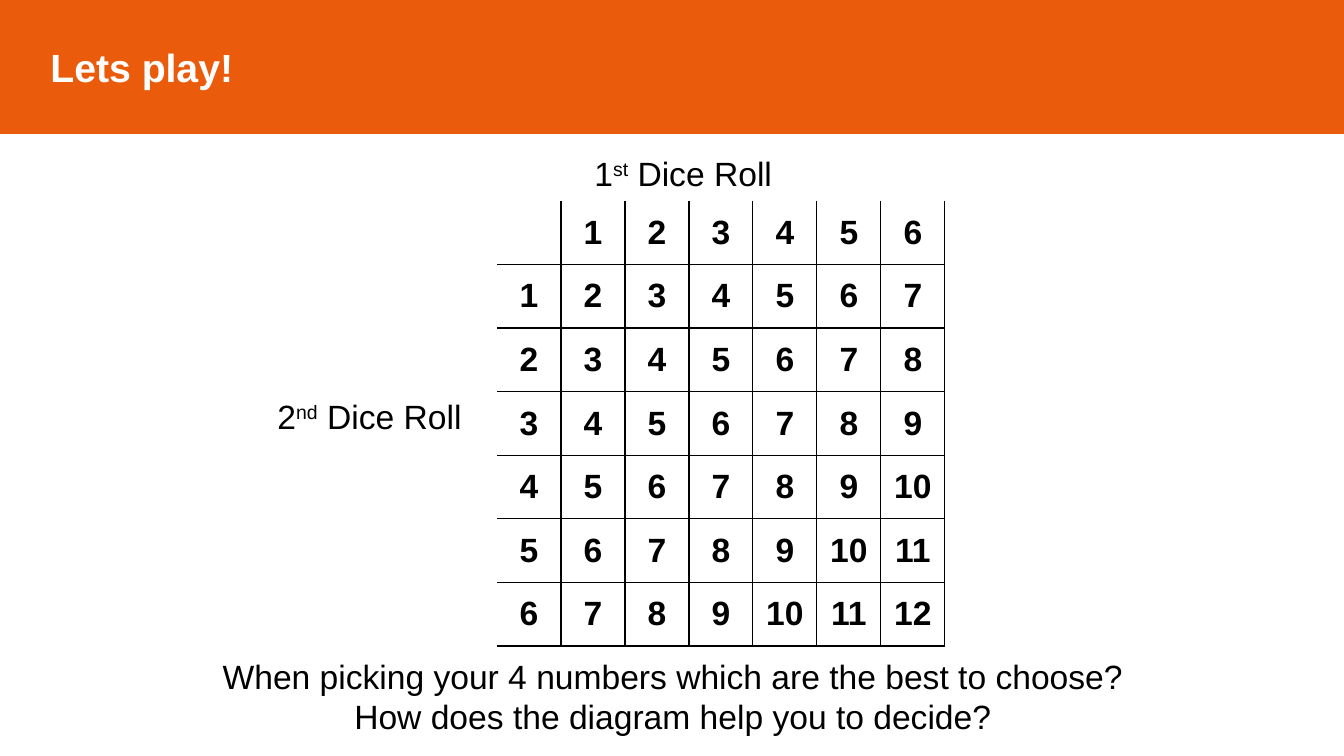
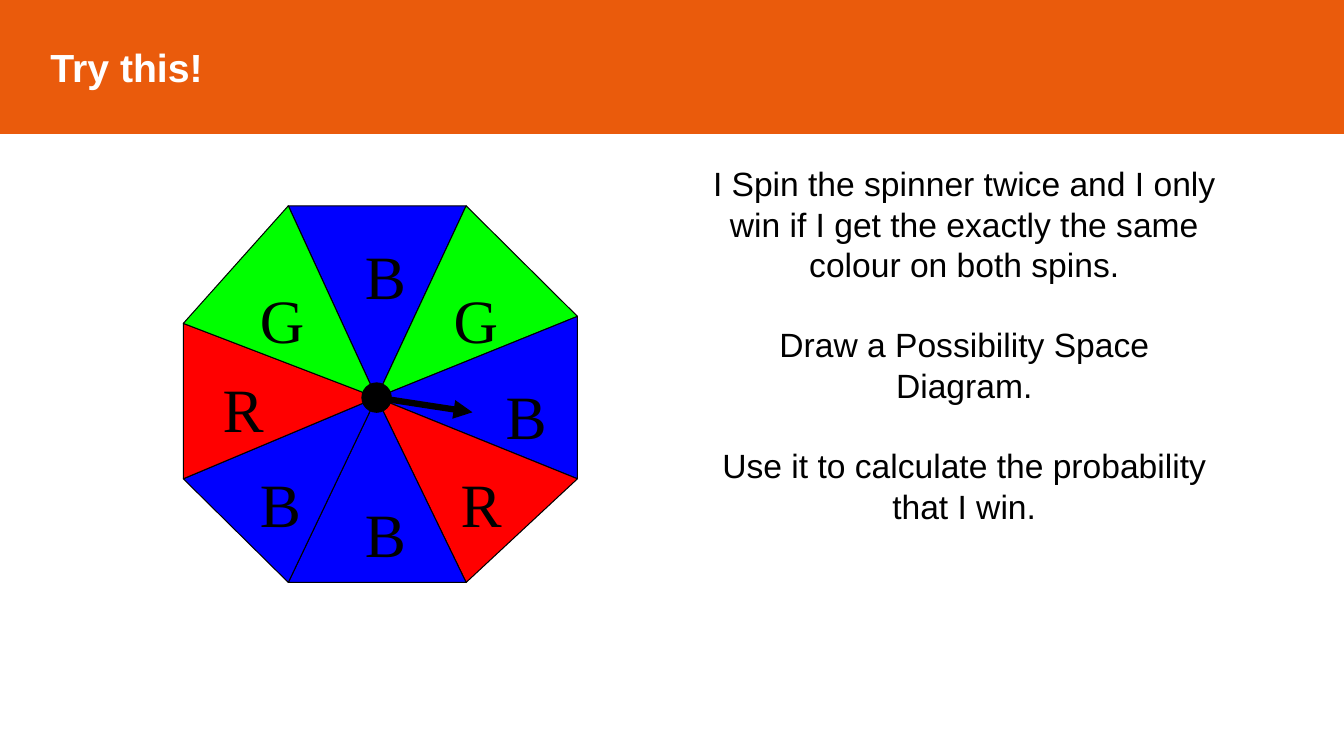
from dataclasses import dataclass

from lxml.etree import SubElement
from pptx import Presentation
from pptx.dml.color import RGBColor
from pptx.enum.shapes import MSO_CONNECTOR, MSO_SHAPE
from pptx.enum.text import MSO_ANCHOR, PP_ALIGN
from pptx.oxml.ns import qn
from pptx.util import Pt

NO_STYLE = "{2D5ABB26-0587-4C30-8999-92F81FD0307C}"


@dataclass(frozen=True)
class Theme:
    width: float = 960
    height: float = 540
    band_height: float = 95
    band: RGBColor = RGBColor(0xEA, 0x5B, 0x0C)
    black: RGBColor = RGBColor(0, 0, 0)
    white: RGBColor = RGBColor(255, 255, 255)
    red: RGBColor = RGBColor(255, 0, 0)
    green: RGBColor = RGBColor(0, 255, 0)
    blue: RGBColor = RGBColor(0, 0, 255)
    font: str = "Arial"
    letter_font: str = "Times New Roman"
    title: float = 28
    body: float = 24
    letter: float = 44


T = Theme()


def pts(*values):
    return [Pt(v) for v in values]


def write(tf, lines, size=T.body, color=T.black, font=T.font, bold=False,
          align=PP_ALIGN.CENTER, gap=0):
    """Write one paragraph per line; in a tuple, every second run is superscript."""
    for i, line in enumerate(lines):
        p = tf.add_paragraph() if i else tf.paragraphs[0]
        p.alignment = align
        p.font.size, p.font.name, p.font.bold = Pt(size), font, bold
        p.font.color.rgb = color
        if i and gap:
            p.space_before = Pt(gap)
        for j, text in enumerate((line,) if isinstance(line, str) else line):
            r = p.add_run()
            r.text = text
            if j % 2:
                r._r.get_or_add_rPr().set("baseline", "30000")


def add_text(shapes, box, lines, anchor=MSO_ANCHOR.TOP, **style):
    tf = shapes.add_textbox(*pts(*box)).text_frame
    tf.word_wrap = True
    tf.vertical_anchor = anchor
    write(tf, lines, **style)


def paint(sp, fill, line, width):
    sp.shadow.inherit = False
    sp.fill.solid()
    sp.fill.fore_color.rgb = fill
    sp.line.color.rgb = line
    sp.line.width = Pt(width)


def add_title_band(s, title):
    sp = s.shapes.add_shape(MSO_SHAPE.RECTANGLE, *pts(0, 0, T.width, T.band_height))
    paint(sp, T.band, T.band, 2)
    tf = sp.text_frame
    tf.margin_left = Pt(36)
    tf.vertical_anchor = MSO_ANCHOR.MIDDLE
    write(tf, [title], T.title, T.white, bold=True, align=PP_ALIGN.LEFT)


def set_borders(cell, sides):
    tcPr = cell._tc.get_or_add_tcPr()
    for side in "LRTB":
        ln = SubElement(tcPr, qn(f"a:ln{side}"), w=str(Pt(1)))
        if side in sides:
            fill = SubElement(ln, qn("a:solidFill"))
            SubElement(fill, qn("a:srgbClr"), val=str(T.black))
        else:
            SubElement(ln, qn("a:noFill"))


def add_sum_table(s, box, faces=6):
    """Grid of dice totals, open along its top and left edges."""
    n = faces + 1
    table = s.shapes.add_table(n, n, *pts(*box)).table
    table._tbl.tblPr.find(qn("a:tableStyleId")).text = NO_STYLE
    table.first_row = table.horz_banding = False
    for k in range(n):
        table.columns[k].width = Pt(box[2] / n)
        table.rows[k].height = Pt(box[3] / n)
    for row in range(n):
        for col in range(n):
            cell = table.cell(row, col)
            set_borders(cell, "RB" + "L" * (col > 0) + "T" * (row > 0))
            cell.fill.background()
            cell.vertical_anchor = MSO_ANCHOR.MIDDLE
            if row + col:
                write(cell.text_frame, [str(row + col)], bold=True)


def add_spinner(s, left, top):
    """Eight coloured sectors, clockwise from the top, with letters and a pointer."""
    shapes = s.shapes.add_group_shape().shapes
    colors = {"R": T.red, "G": T.green, "B": T.blue}
    rim = [(75, 0), (202, 0), (281.5, 79), (281.5, 195),
           (202, 269), (75, 269), (0, 195), (0, 84)]
    letter_spots = [(122.5, 15.7), (186, 47.5), (223, 116), (191, 179),
                    (122.5, 200), (47.5, 179), (21, 111), (47.5, 47.5)]
    sectors = "BGBRBBRG"
    letter_size = 63, 67
    hub = 21

    def at(x, y):
        return pts(left + x, top + y)

    center = at(138, 137)
    for i, name in enumerate(sectors):
        builder = shapes.build_freeform(*center)
        builder.add_line_segments([at(*rim[i]), at(*rim[(i + 1) % len(rim)])])
        paint(builder.convert_to_shape(), colors[name], T.black, 0.75)

    for name, (x, y) in zip(sectors, letter_spots):
        add_text(shapes, (left + x, top + y, *letter_size), [name], MSO_ANCHOR.MIDDLE,
                 size=T.letter, font=T.letter_font, align=PP_ALIGN.LEFT)

    pointer = shapes.add_connector(MSO_CONNECTOR.STRAIGHT, *center, *at(206.5, 147.5))
    pointer.line.color.rgb = T.black
    pointer.line.width = Pt(4.5)
    SubElement(pointer.line._get_or_add_ln(), qn("a:tailEnd"), type="triangle")
    SubElement(pointer._element.spPr, qn("a:effectLst"))

    sp = shapes.add_shape(MSO_SHAPE.OVAL, *at(138 - hub / 2, 137 - hub / 2), *pts(hub, hub))
    paint(sp, T.black, T.black, 0.75)


def add_dice_slide(s):
    add_title_band(s, "Lets play!")
    add_sum_table(s, (355, 143.5, 320, 318))
    add_text(s.shapes, (185, 279.5, 158, 36), [("2", "nd", " Dice Roll")])
    add_text(s.shapes, (417.5, 106, 147, 36), [("1", "st", " Dice Roll")],
             align=PP_ALIGN.LEFT)
    add_text(s.shapes, (121, 465, 719, 65), [
        "When picking your 4 numbers which are the best to choose?",
        "How does the diagram help you to decide?",
    ])


def add_spinner_slide(s):
    add_title_band(s, "Try this!")
    add_spinner(s, 131, 147)
    add_text(s.shapes, (500.5, 113, 376.5, 269), [
        "I Spin the spinner twice and I only win if I get the exactly the same "
        "colour on both spins.",
        "Draw a Possibility Space Diagram.",
        "Use it to calculate the probability that I win.",
    ], gap=28.8)


def main():
    prs = Presentation()
    prs.slide_width, prs.slide_height = pts(T.width, T.height)
    for build in (add_dice_slide, add_spinner_slide):
        build(prs.slides.add_slide(prs.slide_layouts[6]))
    prs.save("out.pptx")


if __name__ == "__main__":
    main()
